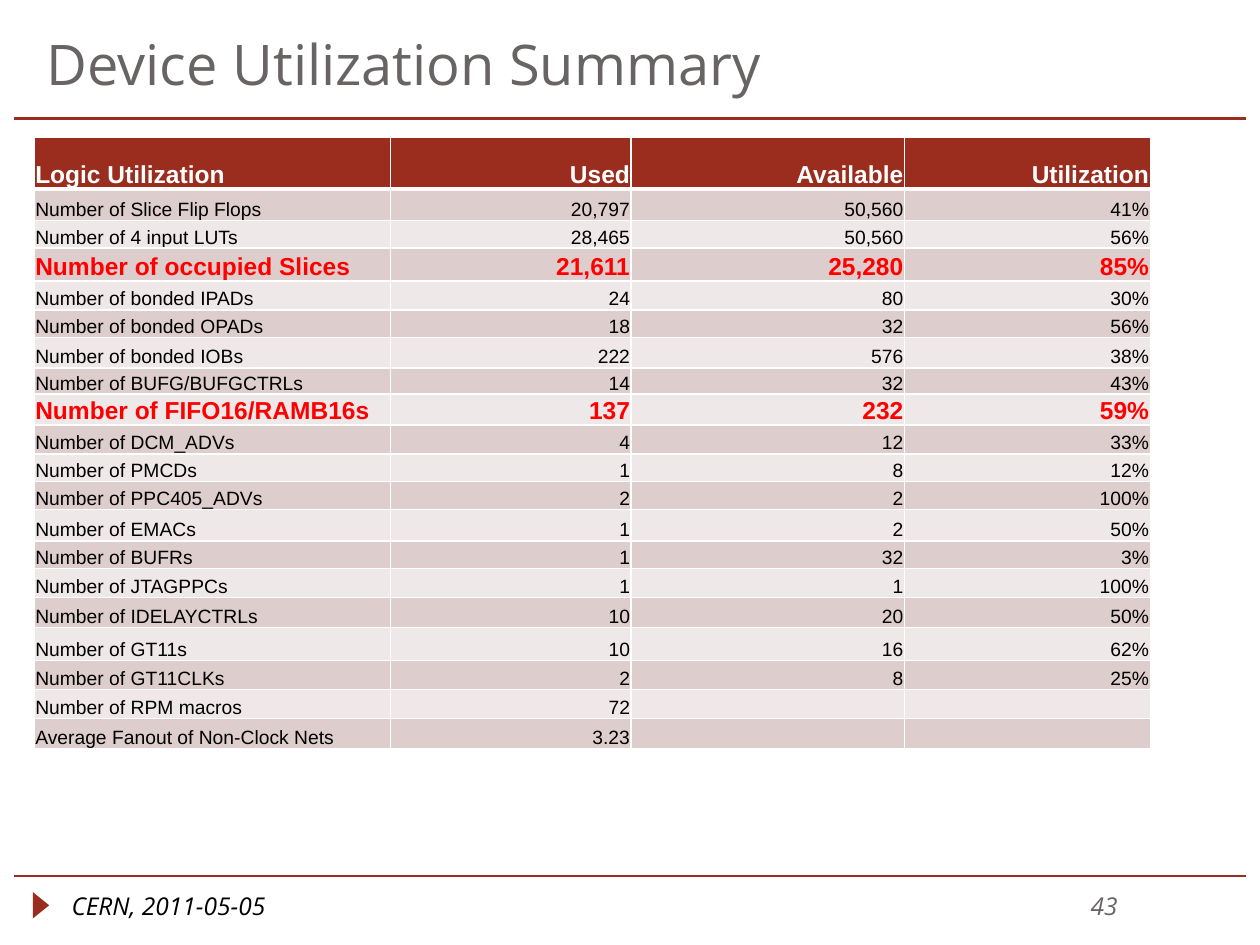
from dataclasses import dataclass

from lxml import etree
from pptx import Presentation
from pptx.dml.color import RGBColor
from pptx.enum.shapes import MSO_CONNECTOR, MSO_SHAPE
from pptx.enum.text import MSO_ANCHOR, PP_ALIGN
from pptx.oxml.ns import qn
from pptx.util import Inches, Pt

STRAIGHT = MSO_CONNECTOR.STRAIGHT
TRIANGLE = MSO_SHAPE.ISOSCELES_TRIANGLE
BOTTOM = MSO_ANCHOR.BOTTOM
LEFT, RIGHT = PP_ALIGN.LEFT, PP_ALIGN.RIGHT
TITLE_ONLY = 5


@dataclass(frozen=True)
class Theme:
    accent: str = "9B2D1F"
    grey: str = "696464"
    black: str = "000000"
    white: str = "FFFFFF"
    alert: str = "FF0000"
    bands: tuple = ("DECDCD", "EFE8E8")
    heading_font: str = "Open Sans"
    table_font: str = "Arial"
    title_size: int = 32
    footer_size: int = 14
    strong_size: int = 14
    body_size: int = 11


HEADINGS = ("Logic Utilization", "Used", "Available", "Utilization")
USAGE = (
    ("Number of Slice Flip Flops", "20,797", "50,560", "41%"),
    ("Number of 4 input LUTs", "28,465", "50,560", "56%"),
    ("Number of occupied Slices", "21,611", "25,280", "85%"),
    ("Number of bonded IPADs", "24", "80", "30%"),
    ("Number of bonded OPADs", "18", "32", "56%"),
    ("Number of bonded IOBs", "222", "576", "38%"),
    ("Number of BUFG/BUFGCTRLs", "14", "32", "43%"),
    ("Number of FIFO16/RAMB16s", "137", "232", "59%"),
    ("Number of DCM_ADVs", "4", "12", "33%"),
    ("Number of PMCDs", "1", "8", "12%"),
    ("Number of PPC405_ADVs", "2", "2", "100%"),
    ("Number of EMACs", "1", "2", "50%"),
    ("Number of BUFRs", "1", "32", "3%"),
    ("Number of JTAGPPCs", "1", "1", "100%"),
    ("Number of IDELAYCTRLs", "10", "20", "50%"),
    ("Number of GT11s", "10", "16", "62%"),
    ("Number of GT11CLKs", "2", "8", "25%"),
    ("Number of RPM macros", "72", "", ""),
    ("Average Fanout of Non-Clock Nets", "3.23", "", ""),
)
CRITICAL = {"Number of occupied Slices", "Number of FIFO16/RAMB16s"}
COLUMN_WIDTHS = (2.83, 1.91, 2.17, 1.95)
ROW_HEIGHTS = (0.41, 0.25, 0.22, 0.26, 0.23, 0.22, 0.24, 0.21, 0.24, 0.23,
               0.22, 0.22, 0.25, 0.22, 0.23, 0.24, 0.26, 0.23, 0.23, 0.24)
CELL_FORMAT = {
    "vertical_anchor": BOTTOM,
    "margin_left": Inches(0.01),
    "margin_top": Inches(0.01),
    "margin_right": Inches(0.01),
    "margin_bottom": 0,
}


class SlideBuilder:
    def __init__(self, slide, theme):
        self.slide = slide
        self.theme = theme

    def set_text(self, paragraph, text, align, color, **font_format):
        paragraph.alignment = align
        if not text:
            # The end mark keeps an empty cell from growing its row.
            size = str(int(font_format["size"].pt * 100))
            etree.SubElement(paragraph._p, qn("a:endParaRPr"), sz=size)
            return
        run = paragraph.add_run()
        run.text = text
        for name, value in font_format.items():
            setattr(run.font, name, value)
        run.font.color.rgb = RGBColor.from_string(color)

    def title(self, text, left, top, width, height):
        heading = self.slide.shapes.title
        heading.left, heading.top = Inches(left), Inches(top)
        heading.width, heading.height = Inches(width), Inches(height)
        heading.text_frame.vertical_anchor = BOTTOM
        self.set_text(heading.text_frame.paragraphs[0], text, LEFT, self.theme.grey,
                      name=self.theme.heading_font, size=Pt(self.theme.title_size))

    def rule(self, y, weight):
        rule = self.slide.shapes.add_connector(
            STRAIGHT, Inches(0.11), Inches(y), Inches(9.89), Inches(y))
        rule.line.color.rgb = RGBColor.from_string(self.theme.accent)
        rule.line.width = Pt(weight)
        etree.SubElement(rule._element.spPr, qn("a:effectLst"))

    def marker(self, left, top, width, height):
        marker = self.slide.shapes.add_shape(
            TRIANGLE, Inches(left), Inches(top), Inches(width), Inches(height))
        marker.rotation = 90
        marker.shadow.inherit = False
        marker.fill.solid()
        marker.fill.fore_color.rgb = RGBColor.from_string(self.theme.accent)
        marker.line.fill.background()

    def footer(self, text, left, width, align, color):
        footer = self.slide.shapes.add_textbox(
            Inches(left), Inches(7.02), Inches(width), Inches(0.4))
        footer.text_frame.word_wrap = True
        self.set_text(footer.text_frame.paragraphs[0], text, align, color, italic=True,
                      name=self.theme.heading_font, size=Pt(self.theme.footer_size))

    def borders(self, cell, **weights):
        properties = cell._tc.get_or_add_tcPr()
        for side in ("lnL", "lnR", "lnT", "lnB"):
            width = str(int(Pt(weights.get(side, 1))))
            line = etree.SubElement(properties, qn(f"a:{side}"), w=width)
            fill = etree.SubElement(line, qn("a:solidFill"))
            etree.SubElement(fill, qn("a:srgbClr"), val=self.theme.white)

    def row_style(self, index, label):
        """Return the fill, text colour, type size and boldness of a row."""
        theme = self.theme
        if index == 0:
            return theme.accent, theme.white, theme.strong_size, True
        band = theme.bands[(index - 1) % 2]
        if label in CRITICAL:
            return band, theme.alert, theme.strong_size, True
        return band, theme.black, theme.body_size, False

    def table(self, records, left, top):
        table = self.slide.shapes.add_table(
            len(records), len(COLUMN_WIDTHS), Inches(left), Inches(top),
            Inches(sum(COLUMN_WIDTHS)), Inches(sum(ROW_HEIGHTS))).table
        for column, width in zip(table.columns, COLUMN_WIDTHS):
            column.width = Inches(width)
        for index, (record, height) in enumerate(zip(records, ROW_HEIGHTS)):
            table.rows[index].height = Inches(height)
            fill, color, size, bold = self.row_style(index, record[0])
            for position, text in enumerate(record):
                cell = table.cell(index, position)
                for name, value in CELL_FORMAT.items():
                    setattr(cell, name, value)
                self.borders(cell, lnB=3 if index == 0 else 1,
                             lnT=3 if index == 1 else 1)
                cell.fill.solid()
                cell.fill.fore_color.rgb = RGBColor.from_string(fill)
                self.set_text(cell.text_frame.paragraphs[0], text,
                              RIGHT if position else LEFT, color,
                              name=self.theme.table_font, size=Pt(size), bold=bold)


def main():
    presentation = Presentation()
    presentation.slide_width, presentation.slide_height = Inches(10), Inches(7.5)
    slide = presentation.slides.add_slide(presentation.slide_layouts[TITLE_ONLY])
    theme = Theme()
    builder = SlideBuilder(slide, theme)
    builder.rule(6.95, 1.25)
    builder.rule(0.94, 1.5)
    builder.marker(0.22, 7.12, 0.21, 0.13)
    builder.title("Device Utilization Summary", 0.27, 0.2, 9, 0.62)
    builder.footer("CERN, 2011-05-05", 0.47, 2.68, LEFT, theme.black)
    builder.footer("43", 6.8, 2.17, RIGHT, theme.grey)
    builder.table((HEADINGS, *USAGE), 0.27, 1.09)
    presentation.save("out.pptx")


if __name__ == "__main__":
    main()
